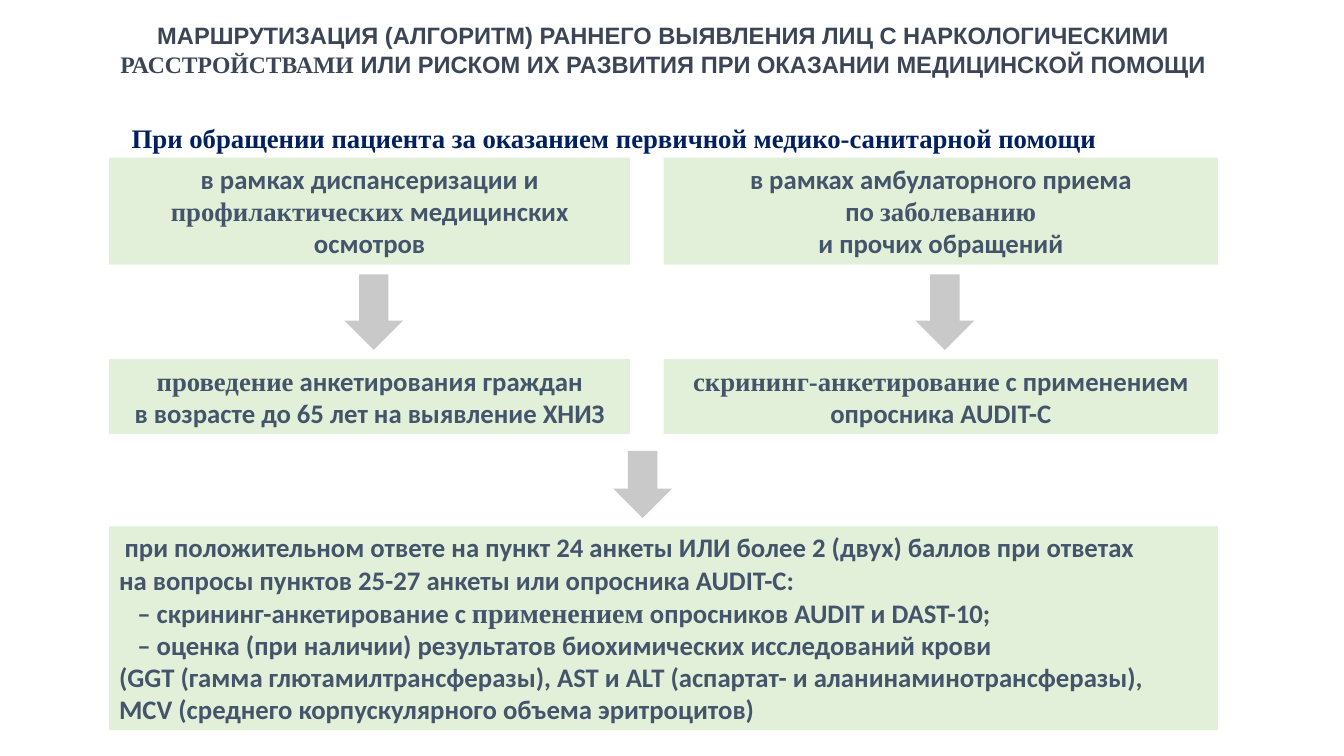
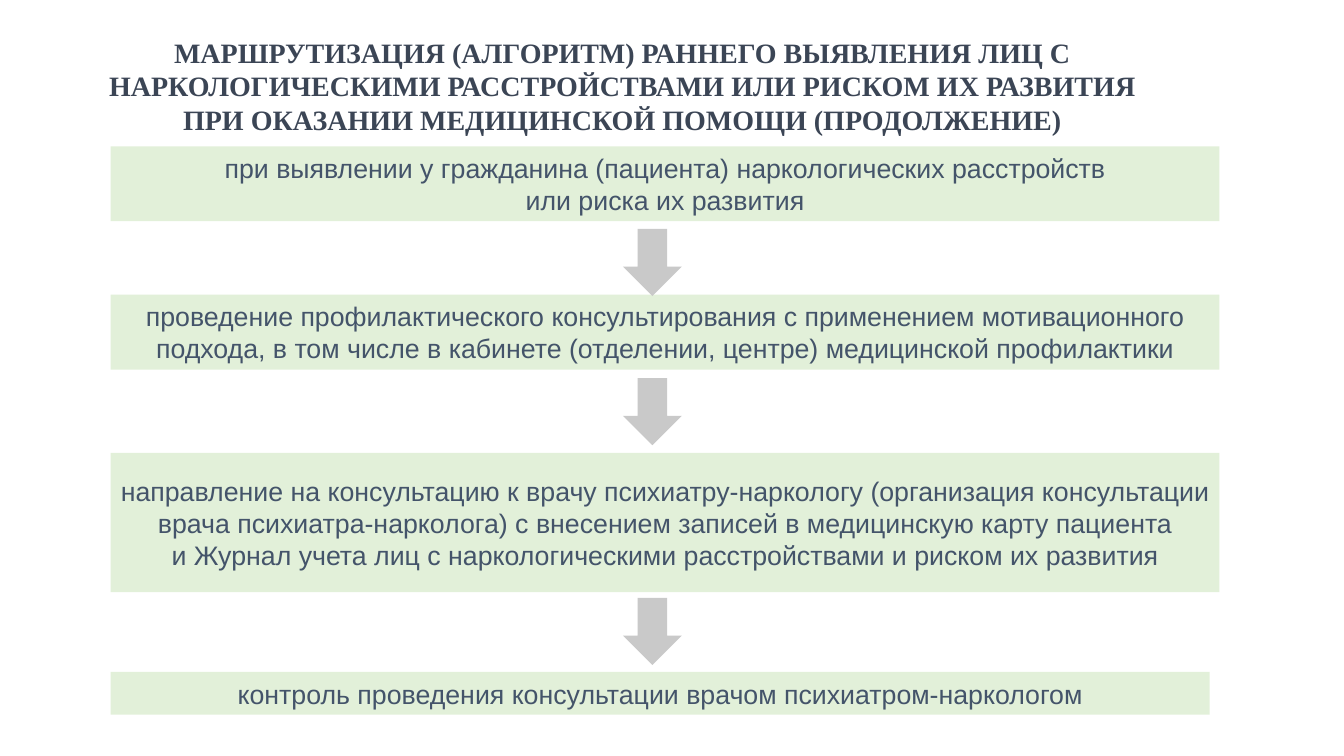
"""Build two slides on the routing of patients with substance use disorders."""
from dataclasses import dataclass

import pptx
import pptx.dml.color
import pptx.enum.shapes
import pptx.enum.text
import pptx.util

Pt = pptx.util.Pt
RGB = pptx.dml.color.RGBColor.from_string
SHAPE = pptx.enum.shapes.MSO_SHAPE
ALIGN = pptx.enum.text.PP_ALIGN
ANCHOR = pptx.enum.text.MSO_ANCHOR
AUTO_SIZE = pptx.enum.text.MSO_AUTO_SIZE


@dataclass(frozen=True)
class Theme:
    """Colours, fonts and type sizes."""
    title: str = "3B4555"
    lead: str = "002060"
    body: str = "44546A"
    box: str = "E2F0D9"
    arrow: str = "C9C9C9"
    sans: str = "Arial"
    plain: str = "Calibri"
    serif: str = "Times New Roman"
    small_title_size: float = 16.9
    title_size: float = 20
    body_size: float = 19.1
    accent_size: float = 20


class Deck:
    """Hold the theme and the current slide."""

    def __init__(self, theme):
        self.theme = theme
        self.prs = pptx.Presentation()
        self.prs.slide_width, self.prs.slide_height = Pt(960), Pt(540)

    def slide(self):
        """Start a blank slide."""
        self.s = self.prs.slides.add_slide(self.prs.slide_layouts[6])

    def fill_text(self, sp, lines, font, size, color, bold=True, align=ALIGN.CENTER,
                  indents=(), accent_size=None):
        """Fill a shape with lines, where |bars| enclose serif words."""
        tf = sp.text_frame
        tf.word_wrap = True
        tf.auto_size = AUTO_SIZE.SHAPE_TO_FIT_TEXT
        for i, line in enumerate(lines):
            p = tf.add_paragraph() if i else tf.paragraphs[0]
            p.alignment = align
            p.font.name, p.font.size, p.font.bold = font, Pt(size), bold
            p.font.color.rgb = RGB(color)
            if i < len(indents):
                p._p.get_or_add_pPr().set("indent", str(Pt(indents[i])))
            for j, text in enumerate(line.split("|")):
                if not text:
                    continue
                r = p.add_run()
                r.text = text
                if j % 2:
                    r.font.name = self.theme.serif
                    if accent_size:
                        r.font.size = Pt(accent_size)

    def text(self, x, y, w, h, line, font, size, color, align=ALIGN.CENTER):
        """Add a bold text box."""
        sp = self.s.shapes.add_textbox(Pt(x), Pt(y), Pt(w), Pt(h))
        self.fill_text(sp, [line], font, size, color, align=align)

    def shape(self, kind, x, y, w, h, fill):
        """Add a flat shape without outline."""
        sp = self.s.shapes.add_shape(kind, Pt(x), Pt(y), Pt(w), Pt(h))
        sp.shadow.inherit = False
        sp.fill.solid()
        sp.fill.fore_color.rgb = RGB(fill)
        sp.line.fill.background()
        return sp

    def box(self, x, y, w, h, lines, font, **style):
        """Add a green step box."""
        sp = self.shape(SHAPE.RECTANGLE, x, y, w, h, self.theme.box)
        sp.text_frame.vertical_anchor = ANCHOR.MIDDLE
        self.fill_text(sp, lines, font, self.theme.body_size, self.theme.body, **style)

    def arrow(self, x, y, h=48):
        """Add a grey down arrow."""
        self.shape(SHAPE.DOWN_ARROW, x, y, 42, h, self.theme.arrow)


def screening(d):
    """Build the screening slide."""
    t = d.theme
    d.slide()
    d.text(66, 11.5, 816, 48,
           "МАРШРУТИЗАЦИЯ (АЛГОРИТМ) РАННЕГО ВЫЯВЛЕНИЯ ЛИЦ С НАРКОЛОГИЧЕСКИМИ "
           "|РАССТРОЙСТВАМИ| ИЛИ РИСКОМ ИХ РАЗВИТИЯ ПРИ ОКАЗАНИИ МЕДИЦИНСКОЙ ПОМОЩИ",
           t.sans, t.small_title_size, t.title)
    d.text(87, 83.5, 786, 30,
           "При обращении пациента за оказанием первичной медико-санитарной помощи",
           t.serif, t.body_size, t.lead, align=ALIGN.LEFT)
    columns = [
        (78, 372, 246,
         ["в рамках диспансеризации и |профилактических| медицинских осмотров"],
         ["|проведение| анкетирования граждан", "в возрасте до 65 лет на выявление ХНИЗ"]),
        (474, 396, 654,
         ["в рамках амбулаторного приема", "по |заболеванию|", "и прочих обращений"],
         ["|скрининг-анкетирование| с применением опросника AUDIT-С"]),
    ]
    for x, w, arrow_x, visit, survey in columns:
        d.box(x, 112.5, w, 76.5, visit, t.plain)
        d.arrow(arrow_x, 196, 54)
        d.box(x, 256.5, w, 53.5, survey, t.plain)
    d.arrow(438, 322)
    d.box(78, 376, 792, 145.5, [
        "при положительном ответе на пункт 24 анкеты ИЛИ более 2 (двух) баллов при ответах",
        "на вопросы пунктов 25-27 анкеты или опросника AUDIT-С:",
        "– скрининг-анкетирование с |применением| опросников AUDIT и DAST-10;",
        "– оценка (при наличии) результатов биохимических исследований крови",
        "(GGT (гамма глютамилтрансферазы), AST и ALT (аспартат- и аланинаминотрансферазы),",
        "MCV (среднего корпускулярного объема эритроцитов)",
    ], t.plain, align=ALIGN.LEFT, indents=(4, 0, 13, 13), accent_size=t.accent_size)


def referral(d):
    """Build the referral slide."""
    t = d.theme
    d.slide()
    d.text(60.5, 21.5, 768, 80,
           "МАРШРУТИЗАЦИЯ (АЛГОРИТМ) РАННЕГО ВЫЯВЛЕНИЯ ЛИЦ С НАРКОЛОГИЧЕСКИМИ "
           "РАССТРОЙСТВАМИ ИЛИ РИСКОМ ИХ РАЗВИТИЯ ПРИ ОКАЗАНИИ МЕДИЦИНСКОЙ ПОМОЩИ "
           "(ПРОДОЛЖЕНИЕ)", t.serif, t.title_size, t.title)
    steps = [
        (104.5, 792, 53.5,
         ["при выявлении у гражданина (пациента) наркологических расстройств",
          "или риска их развития"]),
        (210.5, 792, 53.5,
         ["проведение профилактического консультирования с применением мотивационного "
          "подхода, в том числе в кабинете (отделении, центре) медицинской профилактики"]),
        (323.5, 792, 99.5,
         ["направление на консультацию к врачу психиатру-наркологу (организация "
          "консультации врача психиатра-нарколога) с внесением записей в медицинскую "
          "карту пациента",
          "и Журнал учета лиц с наркологическими расстройствами и риском их развития"]),
        (480, 785, 30.5, ["контроль проведения консультации врачом психиатром-наркологом"]),
    ]
    for y, w, h, lines in steps:
        d.box(79, y, w, h, lines, t.sans, bold=False)
    for y in (163.5, 270, 427):
        d.arrow(445, y)


def main():
    """Build and save the deck."""
    d = Deck(Theme())
    screening(d)
    referral(d)
    d.prs.save("out.pptx")


if __name__ == "__main__":
    main()
